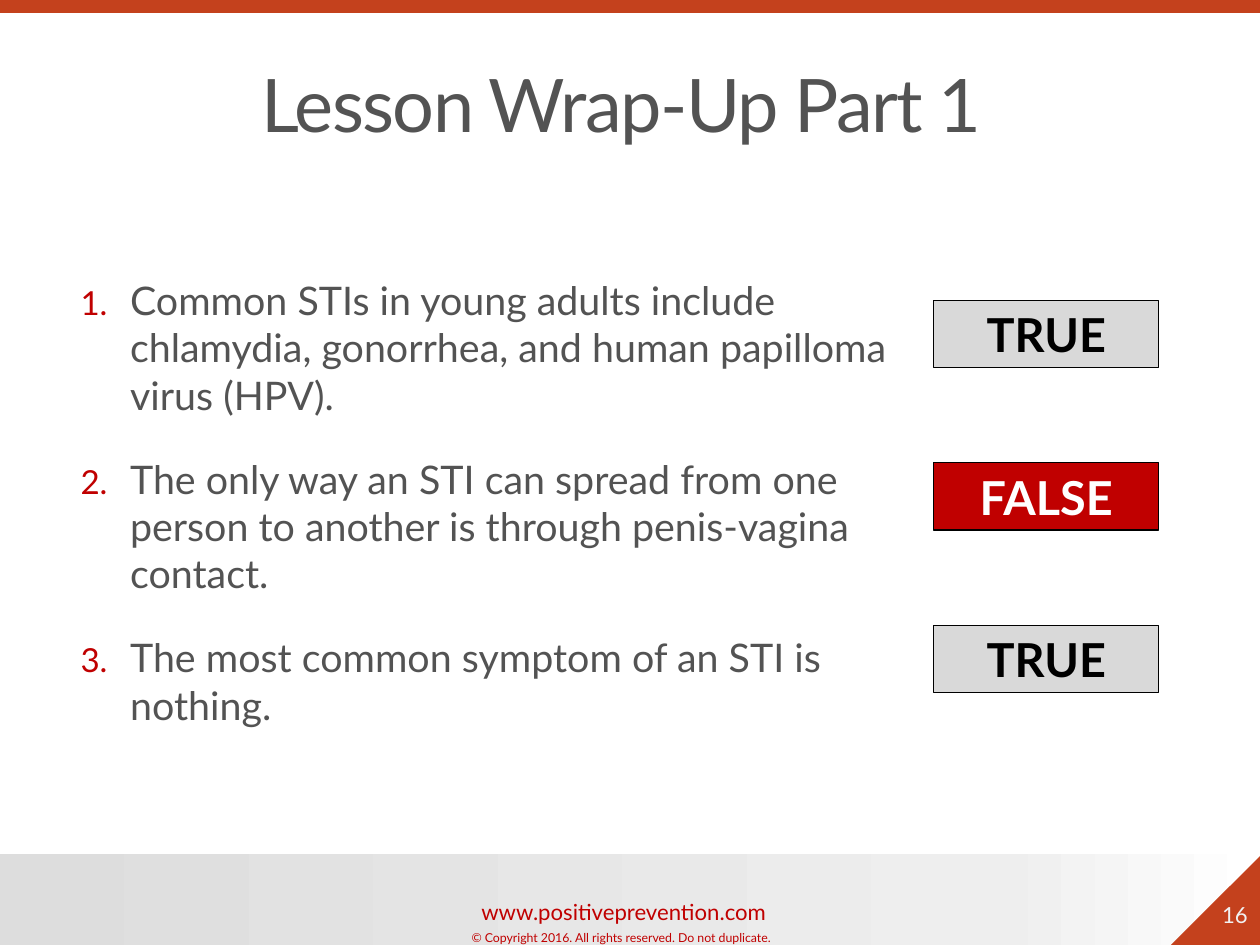
from copy import deepcopy

from lxml import etree
from pptx import Presentation
from pptx import util as u
from pptx.dml.color import RGBColor
from pptx.enum import shapes, text
from pptx.oxml.ns import qn

Cm, Pt = u.Cm, u.Pt
RUST = RGBColor(0xC4, 0x41, 0x1D)
RED = RGBColor(0xC0, 0x00, 0x00)
DARK_GREY = RGBColor(0x53, 0x53, 0x53)
LIGHT_GREY = RGBColor(0xD9, 0xD9, 0xD9)
PALE = RGBColor(0xF1, 0xF1, 0xF1)
BLACK = RGBColor(0x00, 0x00, 0x00)
WHITE = RGBColor(0xFF, 0xFF, 0xFF)
FOOTER_STOPS = [
    (0, RGBColor(0xDD, 0xDD, 0xDD)),
    (0.79, RGBColor(0xEE, 0xEE, 0xEE)),
    (1, WHITE),
]
WIDTH, HEIGHT = 36.12, 27.1
STATEMENTS = [
    ("Common STIs in young adults include chlamydia, gonorrhea, "
     "and human papilloma virus (HPV).", "TRUE"),
    ("The only way an STI can spread from one person to another "
     "is through penis-vagina contact.", "FALSE"),
    ("The most common symptom of an STI is nothing.", "TRUE"),
]
ANSWER_STYLES = {"TRUE": (LIGHT_GREY, BLACK), "FALSE": (RED, WHITE)}


class LessonSlide:
    font_name = "Lato"
    inset = Cm(0.15)

    def __init__(self, slide):
        self.slide = slide
        self.shapes = slide.shapes

    def style(self, paragraph, size, color, bold=False, align=text.PP_ALIGN.CENTER):
        paragraph.alignment = align
        font = paragraph.font
        font.name, font.size, font.bold = self.font_name, Pt(size), bold
        font.color.rgb = color

    def frame(self, shape, anchor):
        frame = shape.text_frame
        frame.word_wrap, frame.vertical_anchor = True, anchor
        frame.margin_left = frame.margin_right = self.inset
        frame.margin_top = frame.margin_bottom = self.inset
        return frame

    def title(self, wording, box, size):
        title = self.shapes.title
        title.left, title.top, title.width, title.height = map(Cm, box)
        frame = title.text_frame
        frame.text = wording
        frame.auto_size = text.MSO_AUTO_SIZE.NONE
        frame.vertical_anchor = text.MSO_ANCHOR.BOTTOM
        heading = frame.paragraphs[0]
        self.style(heading, size, DARK_GREY)
        heading.runs[0].font._element.set("spc", "-130")

    def label(self, wording, box, size, color, anchor=text.MSO_ANCHOR.MIDDLE):
        label = self.shapes.add_textbox(*map(Cm, box))
        frame = self.frame(label, anchor)
        frame.text = wording
        self.style(frame.paragraphs[0], size, color)

    def numbered_list(self, items, box, size):
        listing = self.shapes.add_textbox(*map(Cm, box))
        frame = self.frame(listing, text.MSO_ANCHOR.MIDDLE)
        for index, item in enumerate(items):
            entry = frame.add_paragraph() if index else frame.paragraphs[0]
            entry.text = item
            if index:
                entry.space_before = Pt(30)
            properties = entry._p.get_or_add_pPr()
            properties.set("marL", str(Cm(1.98)))
            properties.set("indent", str(Cm(-1.42)))
            bullet_color = etree.SubElement(properties, qn("a:buClr"))
            etree.SubElement(bullet_color, qn("a:srgbClr"), val=str(RED))
            etree.SubElement(properties, qn("a:buSzPct"), val="84000")
            etree.SubElement(properties, qn("a:buAutoNum"), type="arabicPeriod")
            self.style(entry, size, DARK_GREY, align=text.PP_ALIGN.LEFT)

    def answer(self, verdict, box):
        fill, color = ANSWER_STYLES[verdict]
        answer = self.shapes.add_shape(shapes.MSO_SHAPE.RECTANGLE, *map(Cm, box))
        answer.shadow.inherit = False
        answer.fill.solid()
        answer.fill.fore_color.rgb = fill
        answer.line.color.rgb = BLACK
        answer.line.width = Pt(1)
        frame = self.frame(answer, text.MSO_ANCHOR.MIDDLE)
        frame.text = verdict
        self.style(frame.paragraphs[0], 38, color, bold=True)

    def gradient_band(self, box, stops):
        band = self.shapes.add_shape(shapes.MSO_SHAPE.RECTANGLE, *map(Cm, box))
        band.shadow.inherit = False
        band.line.fill.background()
        band.fill.gradient()
        band.fill.gradient_angle = 0
        stop_list = band._element.spPr.find(".//" + qn("a:gsLst"))
        stop_list.append(deepcopy(stop_list[-1]))
        for stop, (position, color) in zip(band.fill.gradient_stops, stops):
            stop.position = position
            stop.color.rgb = color

    def rule(self, y, weight):
        rule = self.shapes.add_connector(
            shapes.MSO_CONNECTOR.STRAIGHT, 0, Cm(y), Cm(WIDTH), Cm(y))
        rule.line.color.rgb = RUST
        rule.line.width = Pt(weight)
        etree.SubElement(rule._element.spPr, qn("a:effectLst"))

    def corner(self, leg):
        right, bottom = Cm(WIDTH), Cm(HEIGHT)
        builder = self.shapes.build_freeform(right, bottom - Cm(leg))
        builder.add_line_segments([(right, bottom), (right - Cm(leg), bottom)])
        corner = builder.convert_to_shape()
        corner.shadow.inherit = False
        corner.fill.solid()
        corner.fill.fore_color.rgb = RUST
        corner.line.fill.background()


def main():
    deck = Presentation()
    deck.slide_width, deck.slide_height = Cm(WIDTH), Cm(HEIGHT)
    lesson = LessonSlide(deck.slides.add_slide(deck.slide_layouts[5]))

    # Header and footer
    lesson.rule(0.13, 13)
    lesson.gradient_band((0, 24.49, WIDTH, HEIGHT - 24.49), FOOTER_STOPS)
    lesson.corner(2.55)
    lesson.label("www.positiveprevention.com", (4.75, 25.6, 26.26, 1.07), 18, RED)
    lesson.label("© Copyright 2016. All rights reserved. Do not duplicate.",
                 (-0.38, 26.54, 36.37, 0.69), 10, RED, text.MSO_ANCHOR.TOP)
    lesson.label("16", (34.7, 25.7, 1.4, 1.07), 18, PALE, text.MSO_ANCHOR.TOP)

    # Title and statements
    lesson.title("Lesson Wrap-Up Part 1", (1.52, 0.97, 32.59, 3.38), 60)
    lesson.numbered_list([statement for statement, _ in STATEMENTS],
                         (1.6, 6.63, 24.43, 15.54), 32)

    # Answers
    for row, (_, verdict) in enumerate(STATEMENTS):
        lesson.answer(verdict, (26.77, 8.61 + 4.66 * row, 6.45, 1.93))

    deck.save("out.pptx")


if __name__ == "__main__":
    main()
